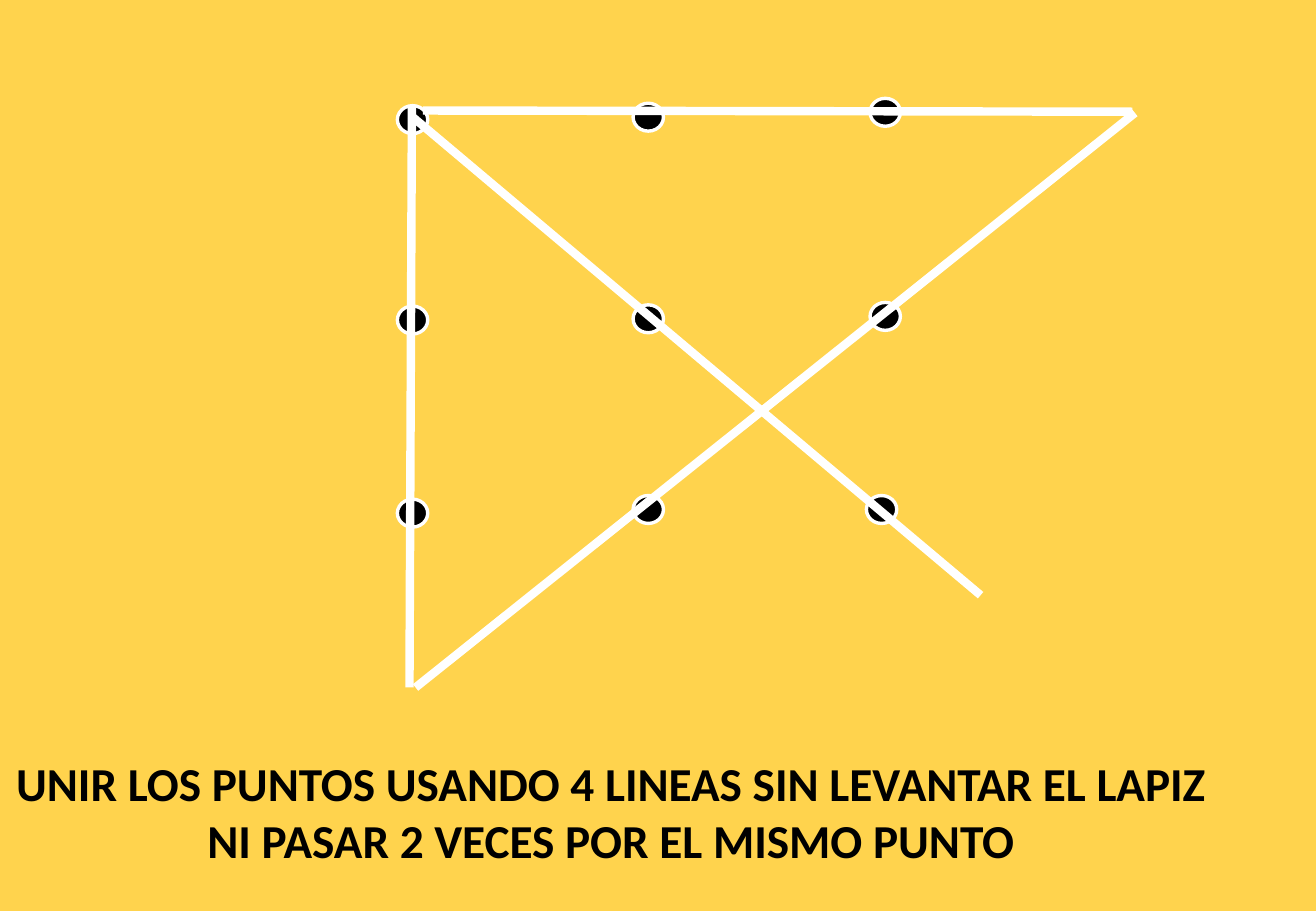
"""Draws the nine-dot puzzle with its four-line solution and the instructions."""
from pptx import Presentation
from pptx import util as u
from pptx.dml.color import RGBColor
from pptx.enum import shapes, text
from pptx.oxml.ns import qn
from lxml import etree

AMBER = RGBColor(0xFF, 0xD3, 0x4D)
BLACK = RGBColor(0, 0, 0)
WHITE = RGBColor(0xFF, 0xFF, 0xFF)

DOT_WIDTH, DOT_HEIGHT = 0.25, 0.23
DOT_ROWS = [
    [(3.27, 0.87), (5.21, 0.85), (7.16, 0.81)],
    [(3.27, 2.52), (5.21, 2.51), (7.16, 2.49)],
    [(3.27, 4.11), (5.21, 4.08), (7.13, 4.08)],
]
STROKES = [
    (3.48, 0.91, 9.32, 0.92),
    (3.42, 5.66, 9.34, 0.93),
    (3.37, 5.66, 3.39, 0.87),
    (3.38, 0.95, 8.07, 4.9),
]
INSTRUCTIONS = [
    "UNIR LOS PUNTOS USANDO 4 LINEAS SIN LEVANTAR EL LAPIZ",
    "NI PASAR 2 VECES POR EL MISMO PUNTO",
]


def apply(target, values):
    for name, value in values.items():
        setattr(target, name, value)


class PuzzleSlide:
    instruction_font = {"name": "Calibri", "size": u.Pt(28), "bold": True}
    instruction_frame = {
        "word_wrap": False,
        "auto_size": text.MSO_AUTO_SIZE.SHAPE_TO_FIT_TEXT,
    }
    dot_outline, stroke_outline = {"width": u.Pt(2)}, {"width": u.Pt(5)}

    def __init__(self, deck):
        self.slide = deck.slides.add_slide(deck.slide_layouts[6])
        backdrop = self.slide.background.fill
        backdrop.solid()
        backdrop.fore_color.rgb = AMBER

    def outline(self, line, values):
        line.color.rgb = WHITE
        apply(line, values)

    def dots(self, rows):
        grid = self.slide.shapes.add_group_shape()
        for row in rows:
            for left, top in row:
                dot = grid.shapes.add_shape(
                    shapes.MSO_SHAPE.OVAL, u.Inches(left), u.Inches(top),
                    u.Inches(DOT_WIDTH), u.Inches(DOT_HEIGHT))
                dot.shadow.inherit = False
                dot.fill.solid()
                dot.fill.fore_color.rgb = BLACK
                self.outline(dot.line, self.dot_outline)

    def instructions(self, sentences, left, top, width, height):
        box = self.slide.shapes.add_textbox(*map(u.Inches, (left, top, width, height)))
        frame = box.text_frame
        apply(frame, self.instruction_frame)
        frame.text = "\n".join(sentences)
        for sentence in frame.paragraphs:
            sentence.alignment = text.PP_ALIGN.CENTER
            apply(sentence.runs[0].font, self.instruction_font)
            sentence.runs[0].font.color.rgb = BLACK

    def stroke(self, *ends):
        pencil = self.slide.shapes.add_connector(
            shapes.MSO_CONNECTOR.STRAIGHT, *map(u.Inches, ends))
        self.outline(pencil.line, self.stroke_outline)
        etree.SubElement(pencil._element.spPr, qn("a:effectLst"))


def main():
    deck = Presentation()
    apply(deck, {"slide_width": u.Inches(10.83), "slide_height": u.Inches(7.5)})
    puzzle = PuzzleSlide(deck)
    puzzle.dots(DOT_ROWS)
    puzzle.instructions(INSTRUCTIONS, -0.03, 6.16, 10.11, 1.04)
    for ends in STROKES:
        puzzle.stroke(*ends)
    deck.save("out.pptx")


if __name__ == "__main__":
    main()
